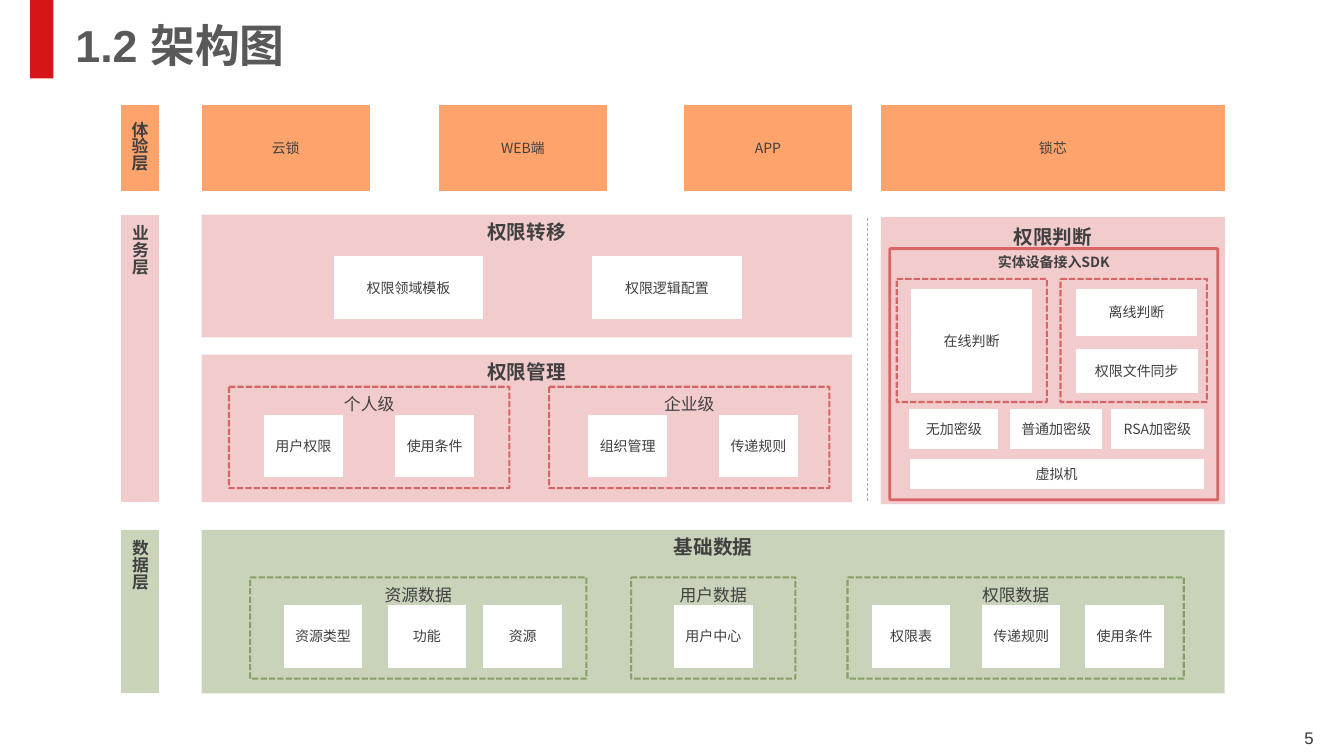
"""Build the layered permission architecture slide."""
from lxml import etree
from pptx import Presentation
from pptx.dml.color import RGBColor
from pptx.enum.dml import MSO_LINE
from pptx.enum.shapes import MSO_CONNECTOR, MSO_SHAPE
from pptx.enum.text import MSO_ANCHOR, PP_ALIGN
from pptx.oxml.ns import qn
from pptx.util import Pt

RECT, PROCESS = MSO_SHAPE.RECTANGLE, MSO_SHAPE.FLOWCHART_PROCESS
STRAIGHT = MSO_CONNECTOR.STRAIGHT
DASH, SHORT_DASH, SOLID = MSO_LINE.DASH, MSO_LINE.SQUARE_DOT, MSO_LINE.SOLID
TOP, MIDDLE = MSO_ANCHOR.TOP, MSO_ANCHOR.MIDDLE
LEFT, CENTER, RIGHT = PP_ALIGN.LEFT, PP_ALIGN.CENTER, PP_ALIGN.RIGHT

WHITE = RGBColor(0xFF, 0xFF, 0xFF)
INK = RGBColor(0x40, 0x40, 0x40)
TITLE_GREY = RGBColor(0x59, 0x59, 0x59)
NUMBER_GREY = RGBColor(0x3B, 0x38, 0x38)
DIVIDER_GREY = RGBColor(0xA6, 0xA6, 0xA6)
ACCENT = RGBColor(0xD7, 0x14, 0x18)
ORANGE = RGBColor(0xFF, 0xA3, 0x6C)
RED = RGBColor(0xC0, 0x00, 0x00)
GREEN = RGBColor(0x79, 0x93, 0x51)
PINK = RGBColor(0xF2, 0xCC, 0xCC)
SAGE = RGBColor(0xC9, 0xD4, 0xB9)

CJK, LATIN = "Noto Sans CJK SC", "Arial"
CARD_W, CARD_H = 56.2, 44.8
LABEL_X, LABEL_W = 86.4, 27.2
BAND_X, BAND_W, FULL_W = 144, 464.4, 730.8
SDK_X, SDK_W = 629.3, 245.6


def write(sp, text, size, bold=False, color=INK, font=CJK, align=CENTER,
          anchor=TOP, spacing=None):
    """Put one styled run into a shape."""
    tf = sp.text_frame
    tf.word_wrap = True
    tf.vertical_anchor = anchor
    p = tf.paragraphs[0]
    p.alignment = align
    if spacing:
        p.line_spacing = spacing
    r = p.add_run()
    r.text = text
    r.font.size = Pt(size)
    r.font.bold = bold
    r.font.name = font
    r.font.color.rgb = color
    etree.SubElement(r.font._element, qn("a:ea"), typeface=CJK)


def set_opacity(parent, percent):
    """Make the colour inside an element translucent."""
    color = next(parent.iter(qn("a:srgbClr")))
    etree.SubElement(color, qn("a:alpha"), val=str(percent * 1000))


def add_block(s, x, y, w, h, fill, opacity=100, kind=PROCESS):
    """Add a filled block without outline."""
    sp = s.shapes.add_shape(kind, Pt(x), Pt(y), Pt(w), Pt(h))
    sp.shadow.inherit = False
    sp.fill.solid()
    sp.fill.fore_color.rgb = fill
    if opacity < 100:
        set_opacity(sp._element.spPr, opacity)
    sp.line.fill.background()
    return sp


def add_frame(s, x, y, w, h, color, opacity, width=1.5, dash=SHORT_DASH):
    """Add an unfilled block with a translucent outline."""
    sp = s.shapes.add_shape(PROCESS, Pt(x), Pt(y), Pt(w), Pt(h))
    sp.shadow.inherit = False
    sp.fill.background()
    sp.line.color.rgb = color
    sp.line.width = Pt(width)
    sp.line.dash_style = dash
    set_opacity(sp.line._ln, opacity)
    return sp


def add_card(s, text, x, y, w=CARD_W, h=CARD_H, fill=WHITE):
    """Add a small block with a centred caption."""
    sp = add_block(s, x, y, w, h, fill)
    sp.text_frame.margin_left = sp.text_frame.margin_right = 0
    write(sp, text, 10, anchor=MIDDLE)


def add_band(s, text, x, y, w, h, color, opacity, spacing=None):
    """Add a tinted band with a bold heading."""
    sp = add_block(s, x, y, w, h, color, opacity)
    write(sp, text, 14, bold=True, spacing=spacing)


def add_group(s, text, x, y, w, color, opacity, cards):
    """Add a dashed group with a heading and a row of cards."""
    write(add_frame(s, x, y, w, 72.4, color, opacity), text, 12, spacing=1.1)
    for caption, card_x in cards:
        add_card(s, caption, card_x, y + 19.8)


def add_label(s, text, y, h, fill, vertical=True):
    """Add the name of a layer at the left edge."""
    sp = add_block(s, LABEL_X, y, LABEL_W, h, fill)
    write(sp, text, 12, bold=True, align=LEFT if vertical else CENTER,
          anchor=MIDDLE, spacing=None if vertical else 0.82)
    if vertical:
        sp.text_frame._txBody.bodyPr.set("vert", "eaVert")


def add_text(s, text, x, y, w, h, size, color, bold=False, align=LEFT):
    """Add a free text box."""
    sp = s.shapes.add_textbox(Pt(x), Pt(y), Pt(w), Pt(h))
    write(sp, text, size, bold, color, LATIN, align, MIDDLE, 0.9)


def add_divider(s, x, top, bottom):
    """Add a thin dashed vertical line."""
    line = s.shapes.add_connector(STRAIGHT, Pt(x), Pt(top), Pt(x), Pt(bottom))
    line.line.color.rgb = DIVIDER_GREY
    line.line.width = Pt(0.5)
    line.line.dash_style = DASH
    etree.SubElement(line._element.spPr, qn("a:effectLst"))


def add_experience_layer(s):
    """Draw the top layer."""
    add_label(s, "体验层", 75, 61.2, ORANGE, vertical=False)
    for text, x, w in [("云锁", BAND_X, 120.2), ("WEB端", 313.4, 120.2),
                       ("APP", 488.4, 120.2), ("锁芯", SDK_X, SDK_W)]:
        add_card(s, text, x, 75, w, 61.2, ORANGE)


def add_business_layer(s):
    """Draw the transfer and management bands."""
    add_label(s, "业务层", 153.4, 205.2, PINK)
    add_band(s, "权限转移", BAND_X, 153.4, BAND_W, 87.6, RED, 20)
    for text, x in [("权限领域模板", 238.4), ("权限逻辑配置", 423)]:
        add_card(s, text, x, 183, 106.8)
    add_band(s, "权限管理", BAND_X, 253.4, BAND_W, 105.2, RED, 20)
    add_group(s, "个人级", 163.6, 276.3, 200.2, RED, 50,
              [("用户权限", 188.6), ("使用条件", 282.4)])
    add_group(s, "企业级", 392.2, 276.3, 200.2, RED, 50,
              [("组织管理", 420.2), ("传递规则", 513.6)])


def add_judgement_panel(s):
    """Draw the device panel at the right."""
    add_divider(s, 619.2, 155.5, 358.6)
    add_band(s, "权限判断", SDK_X, 155.2, SDK_W, 205, RED, 20, 1.1)
    sdk = add_frame(s, 635.6, 177.6, 234.2, 179.4, RED, 50, 2, SOLID)
    write(sdk, "实体设备接入SDK", 10, bold=True)
    for x, w in [(640.6, 107.2), (757.5, 104.6)]:
        add_frame(s, x, 199.2, w, 88, RED, 50)
    for text, x, y, w, h in [
        ("在线判断", 650.6, 206.3, 86.8, 74.4),
        ("离线判断", 768.4, 206.3, 86.8, 33.4),
        ("权限文件同步", 768.4, 249.4, 87.2, 31.2),
        ("无加密级", 649.4, 292.2, 63.8, 28.6),
        ("普通加密级", 721.8, 292.2, 65.2, 28.6),
        ("RSA加密级", 793.6, 292.2, 66.2, 28.6),
        ("虚拟机", 649.8, 327.8, 210, 21.6),
    ]:
        add_card(s, text, x, y, w, h)


def add_data_layer(s):
    """Draw the bottom layer."""
    add_label(s, "数据层", 378.6, 116.6, SAGE)
    add_band(s, "基础数据", BAND_X, 378.6, FULL_W, 116.6, GREEN, 40)
    for text, x, w, cards in [
        ("资源数据", 178.7, 240.2,
         [("资源类型", 202.6), ("功能", 276.8), ("资源", 345.3)]),
        ("用户数据", 450.8, 117.4, [("用户中心", 481.4)]),
        ("权限数据", 605.4, 240.2,
         [("权限表", 622.7), ("传递规则", 701.3), ("使用条件", 775.2)]),
    ]:
        add_group(s, text, x, 412.4, w, GREEN, 80, cards)


def main():
    """Compose and save the slide."""
    prs = Presentation()
    prs.slide_width, prs.slide_height = Pt(960), Pt(540)
    s = prs.slides.add_slide(prs.slide_layouts[6])
    add_block(s, 21.6, 0, 16.6, 56, ACCENT, kind=RECT)
    add_text(s, "1.2 架构图", 46.8, 16.6, 828, 35.2, 32, TITLE_GREY, bold=True)
    add_text(s, "5", 751, 516.2, 194.4, 23, 12, NUMBER_GREY, align=RIGHT)
    add_experience_layer(s)
    add_business_layer(s)
    add_judgement_panel(s)
    add_data_layer(s)
    prs.save("out.pptx")


if __name__ == "__main__":
    main()
